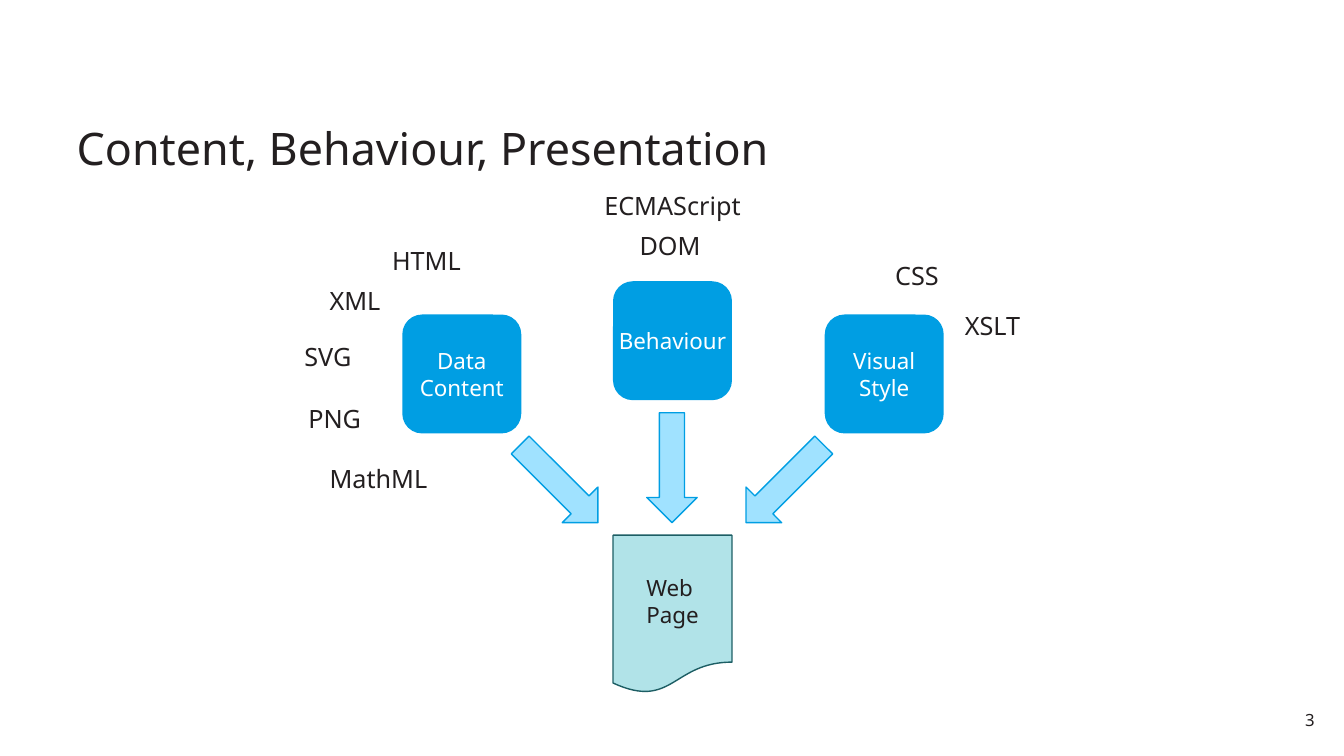
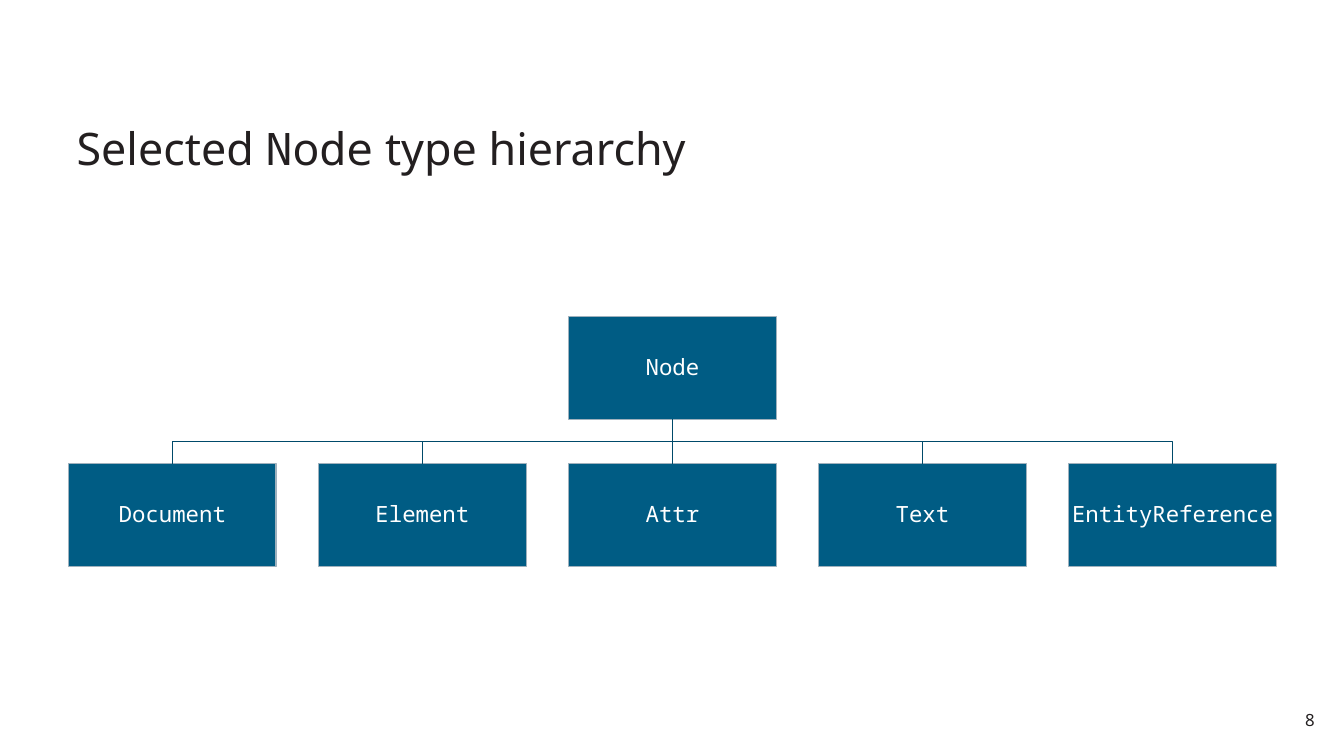
from pptx import Presentation
from pptx.dml.color import RGBColor
from pptx.enum.shapes import MSO_CONNECTOR, MSO_SHAPE
from pptx.enum.text import MSO_ANCHOR, MSO_AUTO_SIZE, PP_ALIGN
from pptx.oxml.ns import qn
from pptx.util import Pt
from lxml import etree

PX = 9144
SANS, MONO = "Noto Sans", "Noto Sans Mono"
INK = RGBColor(0x23, 0x1F, 0x20)
WHITE = RGBColor(0xFF, 0xFF, 0xFF)
BLUE = RGBColor(0x00, 0x9E, 0xE3)
PALE_BLUE = RGBColor(0xA0, 0xE2, 0xFF)
TEAL = RGBColor(0x1D, 0x5E, 0x64)
PALE_TEAL = RGBColor(0xB1, 0xE3, 0xE8)
NAVY = RGBColor(0x00, 0x5C, 0x84)
DARK_NAVY = RGBColor(0x00, 0x4A, 0x6A)
GREY = RGBColor(0x9F, 0xB1, 0xBD)

LEFT, CENTER, RIGHT = PP_ALIGN.LEFT, PP_ALIGN.CENTER, PP_ALIGN.RIGHT
TOP, MIDDLE, BOTTOM = MSO_ANCHOR.TOP, MSO_ANCHOR.MIDDLE, MSO_ANCHOR.BOTTOM
FIXED, GROW = MSO_AUTO_SIZE.NONE, MSO_AUTO_SIZE.SHAPE_TO_FIT_TEXT
ROUND_RECT, RECT = MSO_SHAPE.ROUNDED_RECTANGLE, MSO_SHAPE.RECTANGLE
DOCUMENT, LEFT_ARROW = MSO_SHAPE.FLOWCHART_DOCUMENT, MSO_SHAPE.LEFT_ARROW
STRAIGHT = MSO_CONNECTOR.STRAIGHT

TITLE_BOX = (68, 76, 1197, 102)
NUMBER_BOX = (1265, 698, 47, 31)
SOURCES_BOX = (292, 184)
TREE_BOX = (68, 314, 1198, 248)

CARDS = [("Behaviour", 316, 95), ("Visual Style", 526, 128), ("Data Content", 107, 128)]
ARROWS = [(320, 255, 270), (432, 271, 315), (208, 271, 225)]
LABELS = [
    ("ECMAScript", 295, 0, 160, CENTER),
    ("DOM", 332, 40, 81, CENTER),
    ("CSS", 586, 69, 65, LEFT),
    ("XSLT", 655, 119, 79, LEFT),
    ("HTML", 87, 54, 90, LEFT),
    ("XML", 25, 94, 71, LEFT),
    ("PNG", 4, 211, 73, LEFT),
    ("SVG", 0, 150, 69, LEFT),
    ("MathML", 25, 271, 119, LEFT),
]
NODE_TYPES = ["Document", "Element", "Attr", "Text", "EntityReference"]


def emu(*lengths):
    """Turn px lengths into EMU."""
    return [length * PX for length in lengths]


def set_all(obj, values):
    """Set each named attribute of an object."""
    for name, value in values.items():
        setattr(obj, name, value)


def write(sp, parts, size, color=INK, align=LEFT, anchor=TOP, insets=(10, 5, 10, 5),
          spacing=1.0, wrap=True, fit=FIXED):
    """Write one paragraph of (text, font) parts into a shape."""
    tf = sp.text_frame
    left, top, right, bottom = emu(*insets)
    set_all(tf, {"margin_left": left, "margin_top": top, "margin_right": right,
                 "margin_bottom": bottom, "vertical_anchor": anchor,
                 "word_wrap": wrap, "auto_size": fit})
    p = tf.paragraphs[0]
    set_all(p, {"alignment": align, "line_spacing": spacing})
    for text, font in parts:
        r = p.add_run()
        r.text = text
        set_all(r.font, {"name": font, "size": Pt(size)})
        r.font.color.rgb = color


def set_line(sp, color):
    """Give a shape or connector a 1 pt line."""
    sp.line.color.rgb = color
    sp.line.width = Pt(1)


def add_box(s, kind, box, fill, line=None):
    """Add a flat preset shape with an optional outline."""
    sp = s.shapes.add_shape(kind, *emu(*box))
    sp.shadow.inherit = False
    sp.fill.solid()
    sp.fill.fore_color.rgb = fill
    if line is None:
        sp.line.fill.background()
    else:
        set_line(sp, line)
    return sp


def add_elbow(s, x1, y1, x2, y2):
    """Add an open path that goes down, across and down again."""
    bend = (y1 + y2) // 2
    builder = s.shapes.build_freeform(x1, y1, scale=PX)
    builder.add_line_segments([(x1, bend), (x2, bend), (x2, y2)], close=False)
    sp = builder.convert_to_shape()
    sp.shadow.inherit = False
    sp.fill.background()
    set_line(sp, DARK_NAVY)


def add_stem(s, x, y1, y2, parent, child):
    """Add a straight line from the bottom of parent to the top of child."""
    cx = s.shapes.add_connector(STRAIGHT, *emu(x, y1, x, y2))
    cx.begin_connect(parent, 2)
    cx.end_connect(child, 0)
    set_line(cx, DARK_NAVY)
    etree.SubElement(cx._element.spPr, qn("a:effectLst"))


def add_slide(prs, title_parts, number):
    """Add a title-only slide with its title and page number."""
    s = prs.slides.add_slide(prs.slide_layouts[5])
    title = s.shapes.title
    set_all(title, dict(zip(("left", "top", "width", "height"), emu(*TITLE_BOX))))
    write(title, title_parts, 32, anchor=BOTTOM, insets=(8, 4, 8, 4), spacing=0.9)
    sp = s.shapes.add_textbox(*emu(*NUMBER_BOX))
    write(sp, [(number, SANS)], 12, align=RIGHT, insets=(8, 6, 8, 6))
    return s


def draw_sources(s, left, top):
    """Draw the three sources and their technologies leading to a web page."""
    page = add_box(s, DOCUMENT, (left + 316, top + 347, 118, 157), PALE_TEAL, TEAL)
    write(page, [("Web Page", SANS)], 16, anchor=MIDDLE, insets=(33, 5, 10, 0))
    for text, x, y in CARDS:
        sp = add_box(s, ROUND_RECT, (left + x, top + y, 118, 118), BLUE)
        write(sp, [(text, SANS)], 16, WHITE, CENTER, MIDDLE, (0, 0, 0, 0))
    for x, y, angle in ARROWS:
        sp = add_box(s, LEFT_ARROW, (left + x, top + y, 109, 50), PALE_BLUE, BLUE)
        sp.rotation = angle
    for text, x, y, width, align in LABELS:
        sp = s.shapes.add_textbox(*emu(left + x, top + y, width, 40))
        write(sp, [(text, SANS)], 18, align=align, wrap=False, fit=GROW)


def add_node(s, text, x, y, w, h):
    """Add one type box."""
    sp = add_box(s, RECT, (x, y, w, h), NAVY, GREY)
    write(sp, [(text, MONO)], 16, WHITE, CENTER, MIDDLE, (1, 1, 1, 1), 0.9)
    return sp


def draw_tree(s, left, top, width, height):
    """Draw the root type over an evenly spaced row of its subtypes."""
    w, h = 206, 102
    pitch = (width - w) // (len(NODE_TYPES) - 1)
    row_top = top + height - h
    mid = left + width // 2
    root = add_node(s, "Node", mid - w // 2, top, w, h)
    for i, text in enumerate(NODE_TYPES):
        x = left + i * pitch
        child = add_node(s, text, x, row_top, w, h)
        center = x + w // 2
        if center == mid:
            add_stem(s, mid, top + h, row_top, root, child)
        else:
            add_elbow(s, mid, top + h, center, row_top)


def main():
    """Build and save the presentation."""
    prs = Presentation()
    set_all(prs, {"slide_width": 1333 * PX, "slide_height": 750 * PX})
    s = add_slide(prs, [("Content, Behaviour, Presentation", SANS)], "3")
    draw_sources(s, *SOURCES_BOX)
    s = add_slide(prs, [("Selected ", SANS), ("Node", MONO), (" type hierarchy", SANS)], "8")
    draw_tree(s, *TREE_BOX)
    prs.save("out.pptx")


if __name__ == "__main__":
    main()
